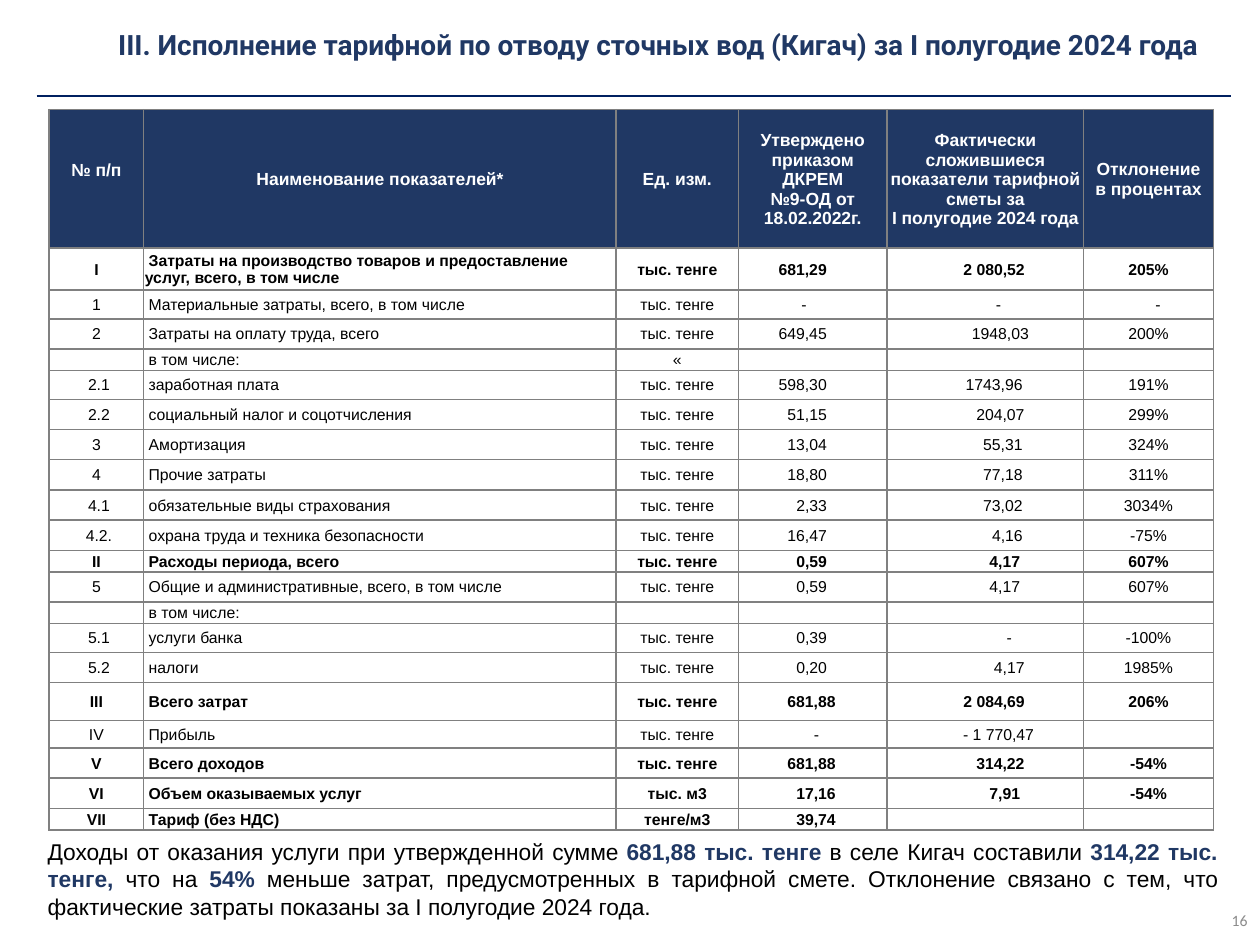
from lxml.etree import SubElement
from pptx import Presentation
from pptx.dml.color import RGBColor
from pptx.enum.shapes import MSO_CONNECTOR
from pptx.enum.text import MSO_ANCHOR, PP_ALIGN
from pptx.oxml.ns import qn
from pptx.util import Inches, Pt

COLORS = {"navy": "203864", "rule": "002060", "border": "808080",
          "black": "000000", "white": "FFFFFF", "page": "8C8C8C"}

TITLE = "III. Исполнение тарифной по отводу сточных вод (Кигач) за I полугодие 2024 года"
# Text between asterisks is highlighted
SUMMARY = ("Доходы от оказания услуги при утвержденной сумме *681,88 тыс. тенге *"
           "в селе Кигач составили *314,22 тыс. тенге, *что на *54% *"
           "меньше затрат, предусмотренных в тарифной смете. Отклонение связано с тем, "
           "что фактические затраты показаны за I полугодие 2024 года.")
PAGE_NUMBER = "16"

HEADER = ["№ п/п", "Наименование показателей*", "Ед. изм.",
          "Утверждено приказом ДКРЕМ\n№9-ОД от 18.02.2022г.",
          "Фактически сложившиеся показатели тарифной сметы за\nI полугодие 2024 года",
          "Отклонение\nв процентах"]
UNIT = "тыс. тенге"
# Height, number, name, unit, (approved, indent), (actual, indent), deviation
NONE = ("", 0)
ROWS = [
    (0.33, "I", "Затраты на производство товаров и предоставление услуг, всего, в том числе",
     UNIT, ("681,29", 0.31), ("2 080,52", 0.14), "205%"),
    (0.23, "1", "Материальные затраты, всего, в том числе", UNIT, ("-", 0.49), ("-", 0.21), "-"),
    (0.24, "2", "Затраты на оплату труда, всего", UNIT, ("649,45", 0.31), ("1948,03", 0.24), "200%"),
    (0.17, "", "в том числе:", "«", NONE, NONE, ""),
    (0.23, "2.1", "заработная плата", UNIT, ("598,30", 0.31), ("1743,96", 0.14), "191%"),
    (0.24, "2.2", "социальный налог и соцотчисления", UNIT, ("51,15", 0.38), ("204,07", 0.24), "299%"),
    (0.24, "3", "Амортизация", UNIT, ("13,04", 0.38), ("55,31", 0.28), "324%"),
    (0.24, "4", "Прочие затраты", UNIT, ("18,80", 0.38), ("77,18", 0.28), "311%"),
    (0.24, "4.1", "обязательные виды страхования", UNIT, ("2,33", 0.45), ("73,02", 0.28), "3034%"),
    (0.24, "4.2.", "охрана труда и техника безопасности", UNIT, ("16,47", 0.38), ("4,16", 0.35), "-75%"),
    (0.17, "II", "Расходы периода, всего", UNIT, ("0,59", 0.45), ("4,17", 0.31), "607%"),
    (0.24, "5", "Общие и административные, всего, в том числе", UNIT,
     ("0,59", 0.45), ("4,17", 0.31), "607%"),
    (0.17, "", "в том числе:", "", NONE, NONE, ""),
    (0.23, "5.1", "услуги банка", UNIT, ("0,39", 0.45), ("-", 0.38), "-100%"),
    (0.24, "5.2", "налоги", UNIT, ("0,20", 0.45), ("4,17", 0.38), "1985%"),
    (0.3, "III", "Всего затрат", UNIT, ("681,88", 0.38), ("2 084,69", 0.14), "206%"),
    (0.22, "IV", "Прибыль", UNIT, ("-", 0.59), ("- 1 770,47", 0.21), ""),
    (0.24, "V", "Всего доходов", UNIT, ("681,88", 0.38), ("314,22", 0.24), "-54%"),
    (0.24, "VI", "Объем оказываемых услуг", "тыс. м3", ("17,16", 0.45), ("7,91", 0.31), "-54%"),
    (0.17, "VII", "Тариф (без НДС)", "тенге/м3", ("39,74", 0.45), NONE, ""),
]
BOLD_ROWS = {"I", "II", "III", "V", "VI", "VII"}
COLUMN_WIDTHS = [0.75, 3.75, 0.97, 1.18, 1.56, 1.03]
HEADER_HEIGHT = 1.1
CELL_MARGIN = 0.01
NAME_COLUMN, APPROVED_COLUMN = 1, 3


def rgb(name):
    return RGBColor.from_string(COLORS[name])


def set_font(font, name, size, color, bold=False):
    font.name, font.size, font.bold = name, Pt(size), bold
    font.color.rgb = rgb(color)


def add_text(page, place, anchor, align):
    box = page.shapes.add_textbox(*map(Inches, place))
    box.text_frame.word_wrap = True
    box.text_frame.vertical_anchor = anchor
    para = box.text_frame.paragraphs[0]
    para.alignment = align
    return para


def add_borders(cell):
    properties = cell._tc.get_or_add_tcPr()
    for index, side in enumerate(("a:lnL", "a:lnR", "a:lnT", "a:lnB")):
        line = properties.makeelement(qn(side), {"w": str(Pt(1))})
        fill = SubElement(line, qn("a:solidFill"))
        SubElement(fill, qn("a:srgbClr"), val=COLORS["border"])
        properties.insert(index, line)


def fill_cell(cell, text, size, color, bold, align=PP_ALIGN.CENTER, indent=0):
    cell.vertical_anchor = MSO_ANCHOR.MIDDLE
    cell.margin_left = Inches(CELL_MARGIN + indent)
    cell.margin_right = cell.margin_top = Inches(CELL_MARGIN)
    cell.margin_bottom = 0
    para = cell.text_frame.paragraphs[0]
    para.alignment = align
    if text:
        para.text = text
    else:
        # An empty cell keeps its row low
        para._p.get_or_add_endParaRPr().set("sz", str(size * 100))
    set_font(para.font, "Arial", size, color, bold)
    add_borders(cell)
    return para


def add_cost_table(page):
    heights = [HEADER_HEIGHT] + [row[0] for row in ROWS]
    frame = page.shapes.add_table(len(heights), len(COLUMN_WIDTHS), Inches(0.39), Inches(0.87),
                                  Inches(sum(COLUMN_WIDTHS)), Inches(sum(heights)))
    table = frame.table
    table.first_row = table.horz_banding = False
    for column, width in zip(table.columns, COLUMN_WIDTHS):
        column.width = Inches(width)
    for row, height in zip(table.rows, heights):
        row.height = Inches(height)

    # Header
    for index, text in enumerate(HEADER):
        cell = table.cell(0, index)
        cell.fill.solid()
        cell.fill.fore_color.rgb = rgb("navy")
        fill_cell(cell, text, 10, "white", True)
    table.cell(0, 0).margin_bottom = Inches(0.15)

    # Body
    for row_index, (_, number, name, unit, approved, actual, deviation) in enumerate(ROWS, 1):
        number_indent = 0.04 if "." in number else 0
        dash = deviation == "-"
        entries = [(number, number_indent), (name, 0), (unit, 0), approved, actual,
                   (deviation, 0.56 if dash else 0)]
        for index, (text, indent) in enumerate(entries):
            left = index in (NAME_COLUMN, APPROVED_COLUMN) or (dash and index == 5)
            cell = table.cell(row_index, index)
            cell.fill.background()
            para = fill_cell(cell, text, 9, "black", number in BOLD_ROWS,
                             PP_ALIGN.LEFT if left else PP_ALIGN.CENTER, indent)
            if index == NAME_COLUMN:
                para._p.get_or_add_pPr().set("indent", str(Inches(0.03)))


def main():
    deck = Presentation()
    deck.slide_width, deck.slide_height = Inches(10), Inches(7.5)
    page = deck.slides.add_slide(deck.slide_layouts[6])

    add_cost_table(page)

    # Summary
    para = add_text(page, (0.28, 6.6, 9.48, 1.01), MSO_ANCHOR.TOP, PP_ALIGN.JUSTIFY)
    for index, text in enumerate(SUMMARY.split("*")):
        span = para.add_run()
        span.text = text
        highlighted = index % 2 == 1
        set_font(span.font, "Arial", 13, "navy" if highlighted else "black", highlighted)

    # Page number
    para = add_text(page, (7.75, 7.1, 2.25, 0.4), MSO_ANCHOR.MIDDLE, PP_ALIGN.RIGHT)
    para.text = PAGE_NUMBER
    set_font(para.font, "Calibri", 9, "page")

    # Title and rule
    para = add_text(page, (0.84, 0.08, 8.93, 0.54), MSO_ANCHOR.MIDDLE, PP_ALIGN.LEFT)
    para.text = TITLE
    set_font(para.font, "Roboto", 16, "navy", True)
    rule = page.shapes.add_connector(MSO_CONNECTOR.STRAIGHT, Inches(0.29), Inches(0.76),
                                     Inches(9.77), Inches(0.76))
    rule.line.color.rgb = rgb("rule")
    rule.line.width = Pt(1)
    SubElement(rule._element.spPr, qn("a:effectLst"))

    deck.save("out.pptx")


if __name__ == "__main__":
    main()
